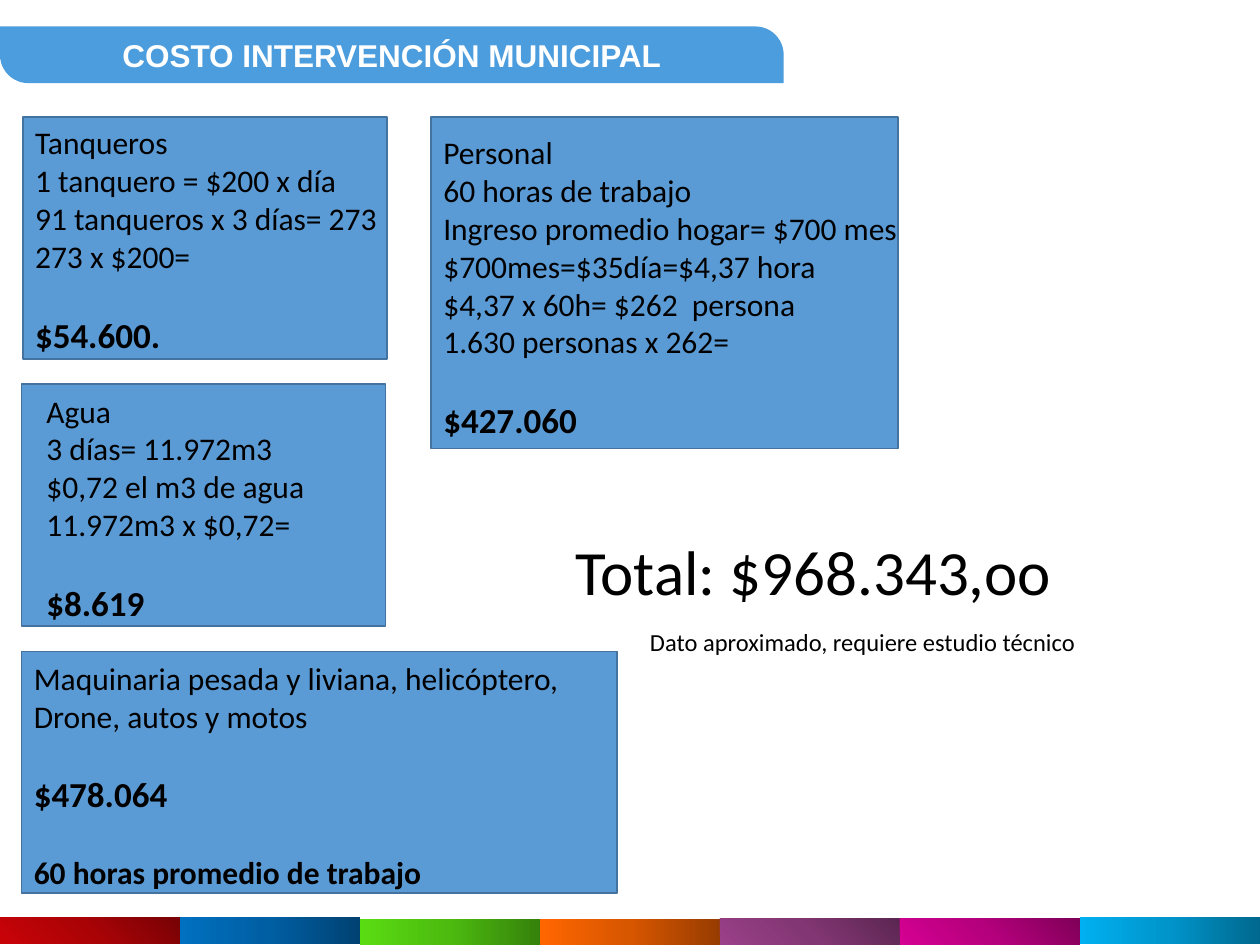
import pptx
import pptx.util
import pptx.dml.color
import pptx.enum.shapes
import pptx.enum.text
import pptx.oxml.ns
import lxml.etree

Inches = pptx.util.Inches
Pt = pptx.util.Pt
SHAPES = pptx.enum.shapes.MSO_SHAPE
LINE_GAP = 22

CARDS = [
    ((0.18, 0.93, 2.89, 1.92), (0, 0, 2.95, 1.97), [
        ("Tanqueros", 18, False, 0),
        ("1 tanquero = $200 x día", 18, False, 0),
        ("91 tanqueros x 3 días= 273", 18, False, 0),
        ("273 x $200=", 18, False, 0),
        ("$54.600.", 20, True, LINE_GAP)]),
    ((0.17, 3.05, 2.89, 1.92), (0.1, 0.01, 2.28, 1.97), [
        ("Agua", 18, False, 0),
        ("3 días= 11.972m3", 18, False, 0),
        ("$0,72 el m3 de agua", 18, False, 0),
        ("11.972m3 x $0,72=", 18, False, 0),
        ("$8.619", 20, True, LINE_GAP)]),
    ((3.42, 0.93, 3.71, 2.63), (0, 0.08, 3.85, 2.58), [
        ("Personal", 18, False, 0),
        ("60 horas de trabajo", 18, False, 0),
        ("Ingreso promedio hogar= $700 mes", 18, False, 0),
        ("$700mes=$35día=$4,37 hora", 18, False, 0),
        ("$4,37 x 60h= $262  persona", 18, False, 0),
        ("1.630 personas x 262=", 18, False, 0),
        ("$427.060", 20, True, LINE_GAP)]),
    ((0.17, 5.17, 4.73, 1.92), (0, 0.01, 4.47, 1.95), [
        ("Maquinaria pesada y liviana, helicóptero,", 18, False, 0),
        ("Drone, autos y motos", 18, False, 0),
        ("$478.064", 20, True, LINE_GAP),
        ("60 horas promedio de trabajo", 18, True, LINE_GAP)]),
]

STRIP = [
    (("770205", "A90306", "C90308"), True, 0),
    (("004272", "005EA2", "0070C0"), False, 0),
    (("35820B", "4CBA0F", "5ADC12"), False, 0.01),
    (("973C00", "D75600", "FF6600"), False, 0.01),
    (("5B2651", "823673", "9A4089"), True, 0.01),
    (("7F0057", "B4007C", "D60093"), True, 0.01),
    (("00688E", "0094CA", "00B0F0"), False, 0),
]


def color(code):
    """Turn a hex string into a colour."""
    return pptx.dml.color.RGBColor.from_string(code)


def add_box(shapes, kind, box, fill=None, line=None):
    """Add a preset shape without shadow."""
    shape = shapes.add_shape(kind, *map(Inches, box))
    shape.shadow.inherit = False
    if fill:
        shape.fill.solid()
        shape.fill.fore_color.rgb = color(fill)
    if line:
        shape.line.color.rgb = color(line)
        shape.line.width = Pt(1)
    else:
        shape.line.fill.background()
    return shape


def add_lines(page, box, lines):
    """Add a text box of (text, size, bold, space before) lines."""
    frame = page.shapes.add_textbox(*map(Inches, box)).text_frame
    frame.word_wrap = False
    frame.auto_size = pptx.enum.text.MSO_AUTO_SIZE.SHAPE_TO_FIT_TEXT
    for index, (text, size, bold, gap) in enumerate(lines):
        para = frame.add_paragraph() if index else frame.paragraphs[0]
        para.text = text
        para.space_before = Pt(gap)
        para.font.name = "Calibri"
        para.font.size = Pt(size)
        para.font.bold = bold
        para.font.color.rgb = color("000000")


def add_card(page, box, inset, lines):
    """Add a cost card with its text placed relative to the card."""
    add_box(page.shapes, SHAPES.RECTANGLE, box, "5B9BD5", "43739E")
    left, top, width, height = inset
    add_lines(page, (box[0] + left, box[1] + top, width, height), lines)


def add_title(page, box, text):
    """Add the title band with two rounded corners."""
    band = add_box(page.shapes, SHAPES.ROUND_2_DIAG_RECTANGLE, box, "4B9DDE")
    band.adjustments[0] = 0
    band.adjustments[1] = 0.5
    frame = band.text_frame
    frame.vertical_anchor = pptx.enum.text.MSO_ANCHOR.MIDDLE
    para = frame.paragraphs[0]
    para.text = text
    para.alignment = pptx.enum.text.PP_ALIGN.CENTER
    para.font.name = "Arial"
    para.font.size = Pt(18)
    para.font.bold = True
    para.font.color.rgb = color("FFFFFF")


def fill_gradient(shape, codes, radial):
    """Fill a shape with evenly spaced colours, dark at the right."""
    qn = pptx.oxml.ns.qn
    child = lxml.etree.SubElement
    shape.fill.gradient()
    grad = shape._element.spPr.find(qn("a:gradFill"))
    for part in list(grad):
        grad.remove(part)
    stops = child(grad, qn("a:gsLst"))
    for index, code in enumerate(codes):
        stop = child(stops, qn("a:gs"), pos=str(index * 50000))
        child(stop, qn("a:srgbClr"), val=code)
    if radial:
        circle = child(grad, qn("a:path"), path="circle")
        child(circle, qn("a:fillToRect"), l="100000", b="100000")
    else:
        child(grad, qn("a:lin"), ang="10800000", scaled="1")


def add_strip(page, box):
    """Add the grouped row of coloured tiles."""
    left, top, width, height = box
    group = page.shapes.add_group_shape()
    tile_width = 1.43
    step = (width - tile_width) / (len(STRIP) - 1)
    for index, (codes, radial, drop) in enumerate(STRIP):
        place = (left + index * step, top + drop, tile_width, height)
        tile = add_box(group.shapes, SHAPES.RECTANGLE, place)
        fill_gradient(tile, codes, radial)


def add_total(page, box):
    """Add the total and the note under it."""
    left, top, width, height = box
    add_lines(page, (left, top, width, 0.71), [("Total: $968.343,oo", 36, False, 0)])
    note = [("Dato aproximado, requiere estudio técnico", 14, False, 0)]
    add_lines(page, (left + 0.59, top + height - 0.34, 3.61, 0.34), note)


def main():
    """Build the slide and save it."""
    deck = pptx.Presentation()
    deck.slide_width, deck.slide_height = Inches(10), Inches(7.5)
    page = deck.slides.add_slide(deck.slide_layouts[6])
    add_strip(page, (0, 7.28, 10, 0.21))
    add_title(page, (0, 0.21, 6.22, 0.45), "COSTO INTERVENCIÓN MUNICIPAL")
    for box, inset, lines in CARDS:
        add_card(page, box, inset, lines)
    add_total(page, (4.47, 4.18, 4.02, 1.09))
    deck.save("out.pptx")


if __name__ == "__main__":
    main()
